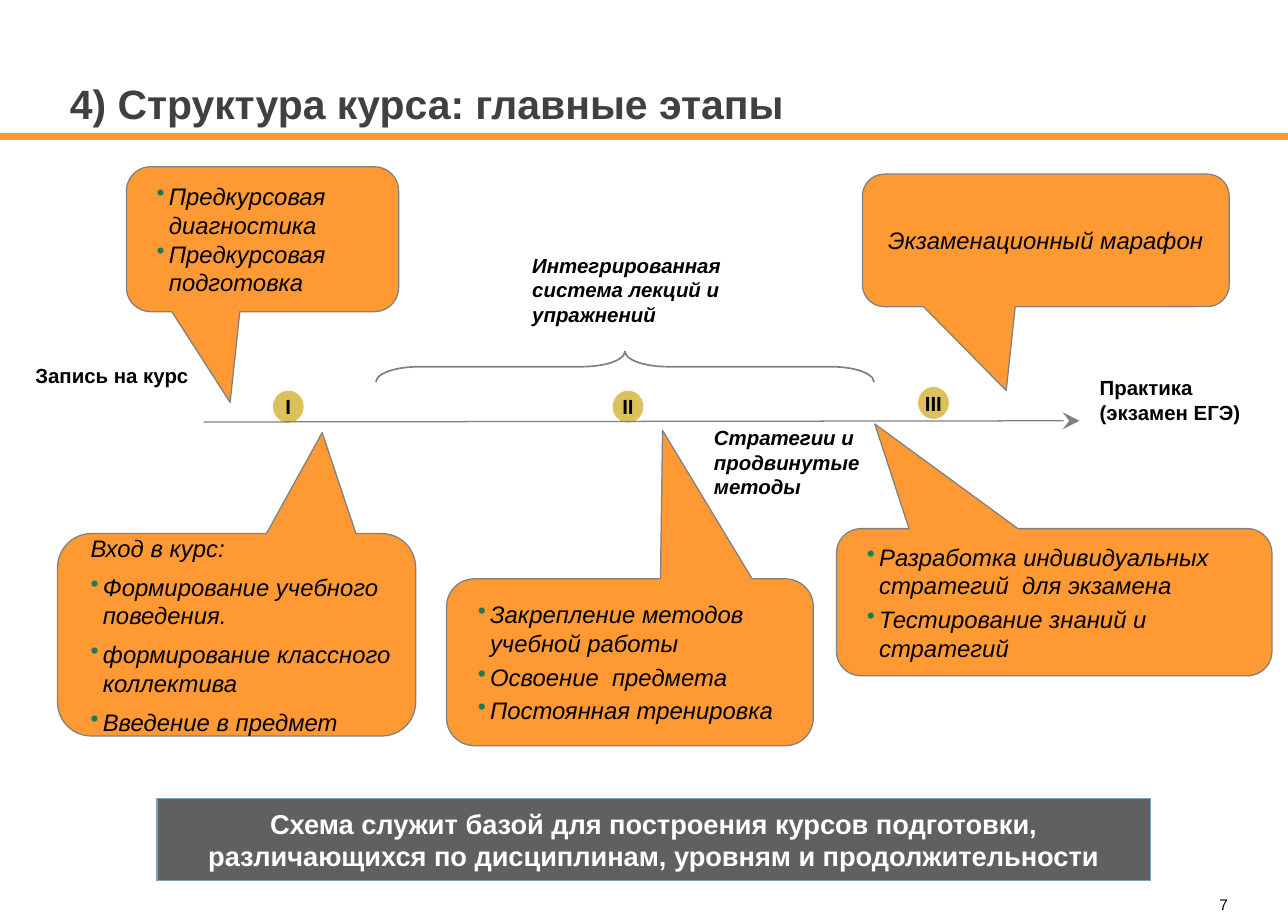
from dataclasses import dataclass, field
from typing import Any, Optional

from lxml import etree
from pptx import Presentation
from pptx import util as u
from pptx.dml.color import RGBColor
from pptx.enum import shapes, text
from pptx.oxml import ns


@dataclass(frozen=True)
class Theme:
    font: str = "Arial"
    black: str = "000000"
    white: str = "FFFFFF"
    title: str = "404040"
    orange: str = "FF9933"
    grey: str = "808080"
    bullet: str = "177B57"
    gold: str = "DCC05A"
    banner: str = "606060"
    banner_edge: str = "79A2B3"
    title_size: float = 24
    banner_size: float = 16
    callout_size: float = 14
    label_size: float = 12
    number_size: float = 9


THEME = Theme()
MIDDLE = text.MSO_ANCHOR.MIDDLE
CENTER = text.PP_ALIGN.CENTER
NO_MARGINS = dict.fromkeys(("margin_left", "margin_right", "margin_top", "margin_bottom"), 0)


@dataclass(frozen=True)
class TextStyle:
    size: float
    color: str = THEME.black
    bold: bool = False
    italic: bool = False
    frame: dict[str, Any] = field(default_factory=dict)
    paragraph: dict[str, Any] = field(default_factory=dict)


@dataclass(frozen=True)
class Box:
    left: float
    top: float
    width: float
    height: float


@dataclass(frozen=True)
class Label:
    box: Box
    lines: list[str]
    style: TextStyle


@dataclass(frozen=True)
class Callout:
    box: Box
    tip: tuple[float, float]
    lines: list[str]
    heading: Optional[str] = None
    space_after: float = 0
    bulleted: bool = True


@dataclass(frozen=True)
class Stage:
    numeral: str
    left: float
    top: float


LABEL = TextStyle(THEME.label_size, bold=True)
LABEL_ITALIC = TextStyle(THEME.label_size, bold=True, italic=True)
CALLOUT = TextStyle(THEME.callout_size, italic=True, frame={"vertical_anchor": MIDDLE})
STAGE = TextStyle(THEME.label_size, bold=True, paragraph={"alignment": CENTER},
                  frame={**NO_MARGINS, "vertical_anchor": MIDDLE, "word_wrap": False})
BANNER = TextStyle(THEME.banner_size, THEME.white, bold=True,
                   frame={"vertical_anchor": MIDDLE}, paragraph={"alignment": CENTER})
NUMBER = TextStyle(THEME.number_size, frame=NO_MARGINS,
                   paragraph={"alignment": text.PP_ALIGN.RIGHT})
TITLE = TextStyle(THEME.title_size, THEME.title, bold=True,
                  frame={"margin_left": 0, "margin_right": 0,
                         "vertical_anchor": text.MSO_ANCHOR.BOTTOM,
                         "auto_size": text.MSO_AUTO_SIZE.NONE},
                  paragraph={"alignment": text.PP_ALIGN.LEFT})

LABELS = [
    Label(Box(412, 246.2, 140, 52.6), ["Стратегии и", "продвинутые", "методы"], LABEL_ITALIC),
    Label(Box(305.3, 144.7, 140, 56.2), ["Интегрированная", "система лекций и упражнений"], LABEL_ITALIC),
    Label(Box(13.7, 209.5, 110.2, 21.6), ["Запись на курс"], LABEL),
    Label(Box(638.4, 216.7, 106, 36), ["Практика (экзамен ЕГЭ)"], LABEL),
    Label(Box(706.3, 525.6, 14.4, 10.8), ["7"], NUMBER),
]

CALLOUTS = [
    Callout(Box(506.2, 102.2, 215.3, 77.8), (-0.108, 1.133),
            ["Экзаменационный марафон"], bulleted=False),
    Callout(Box(74.2, 97.9, 159.8, 85), (-0.119, 1.127),
            ["Предкурсовая диагностика", "Предкурсовая подготовка"]),
    Callout(Box(262.1, 339.8, 215.3, 97.9), (0.089, -1.39),
            ["Закрепление методов учебной работы", "Освоение  предмета",
             "Постоянная тренировка"], space_after=3),
    Callout(Box(33.8, 313.2, 210.2, 118.8), (0.239, -0.999),
            ["Формирование учебного поведения.", "формирование классного коллектива",
             "Введение в предмет"], heading="Вход в курс:", space_after=6),
    Callout(Box(491, 310.3, 255.6, 86.4), (-0.412, -1.211),
            ["Разработка индивидуальных стратегий  для экзамена",
             "Тестирование знаний и стратегий"], space_after=3),
]

STAGES = [Stage("I", 160.6, 229.7), Stage("II", 360, 229.7), Stage("III", 539.3, 227.5)]


def apply(target: Any, values: dict[str, Any]) -> None:
    for name, value in values.items():
        setattr(target, name, value)


def points(*lengths: float) -> list[int]:
    return [u.Pt(length) for length in lengths]


def frame_of(box: Box) -> list[int]:
    return points(box.left, box.top, box.width, box.height)


def write(shape: Any, lines: list[str], style: TextStyle) -> list[Any]:
    frame = shape.text_frame
    apply(frame, {"word_wrap": True, **style.frame})
    frame.text = "\n".join(lines)
    for paragraph in frame.paragraphs:
        apply(paragraph, style.paragraph)
        apply(paragraph.font, {"name": THEME.font, "size": u.Pt(style.size),
                               "bold": style.bold, "italic": style.italic})
        paragraph.font.color.rgb = RGBColor.from_string(style.color)
    return list(frame.paragraphs)


def hang(paragraph: Any, bulleted: bool) -> None:
    properties = paragraph._p.get_or_add_pPr()
    apply(properties, {"marL": u.Pt(13.7), "indent": u.Pt(-7.2)})
    properties.set("marL", str(u.Pt(13.7)))
    properties.set("indent", str(u.Pt(-7.2)))
    if bulleted:
        color = etree.Element(ns.qn("a:buClr"))
        etree.SubElement(color, ns.qn("a:srgbClr"), val=THEME.bullet)
        mark = etree.Element(ns.qn("a:buChar"), char="•")
        default_run = properties.find(ns.qn("a:defRPr"))
        default_run.addprevious(color)
        default_run.addprevious(mark)


def add_shape(slide: Any, kind: Any, box: Box, line: str, width: float = 0.75,
              fill: Optional[str] = None, adjustments: tuple[float, ...] = ()) -> Any:
    shape = slide.shapes.add_shape(kind, *frame_of(box))
    shape.shadow.inherit = False
    for index, value in enumerate(adjustments):
        shape.adjustments[index] = value
    if fill:
        shape.fill.solid()
        shape.fill.fore_color.rgb = RGBColor.from_string(fill)
    else:
        shape.fill.background()
    shape.line.color.rgb = RGBColor.from_string(line)
    shape.line.width = u.Pt(width)
    return shape


def add_line(slide: Any, start: tuple[float, float], end: tuple[float, float],
             color: str, width: float, arrow: bool = False) -> None:
    line = slide.shapes.add_connector(shapes.MSO_CONNECTOR.STRAIGHT, *points(*start, *end))
    line.line.color.rgb = RGBColor.from_string(color)
    line.line.width = u.Pt(width)
    if arrow:
        etree.SubElement(line.line._get_or_add_ln(), ns.qn("a:tailEnd"),
                         type="stealth", w="lg", len="lg")
    etree.SubElement(line._element.spPr, ns.qn("a:effectLst"))


def add_callout(slide: Any, callout: Callout) -> None:
    shape = add_shape(slide, shapes.MSO_SHAPE.ROUNDED_RECTANGULAR_CALLOUT, callout.box,
                      THEME.grey, fill=THEME.orange, adjustments=(*callout.tip, 0.167))
    heading = [callout.heading] if callout.heading else []
    paragraphs = write(shape, heading + callout.lines, CALLOUT)
    for index, paragraph in enumerate(paragraphs):
        if callout.bulleted:
            apply(paragraph, {"alignment": text.PP_ALIGN.LEFT,
                              "space_after": u.Pt(callout.space_after)})
            hang(paragraph, index >= len(heading))
        else:
            paragraph.alignment = CENTER


def main() -> None:
    presentation = Presentation()
    apply(presentation, {"slide_width": u.Pt(756), "slide_height": u.Pt(540)})
    slide = presentation.slides.add_slide(presentation.slide_layouts[5])
    title = slide.shapes.title
    apply(title, dict(zip(("left", "top", "width", "height"), points(41, 13, 679, 65.5))))
    write(title, ["4) Структура курса: главные этапы"], TITLE)
    add_line(slide, (756, 80.2), (0, 80.2), THEME.orange, 4.25)
    for label in LABELS:
        write(slide.shapes.add_textbox(*frame_of(label.box)), label.lines, label.style)
    brace = add_shape(slide, shapes.MSO_SHAPE.LEFT_BRACE, Box(357.8, 69.1, 18, 292.3),
                      THEME.grey, 1, adjustments=(1.395, 0.5))
    brace.rotation = 90
    for callout in CALLOUTS:
        add_callout(slide, callout)
    banner = add_shape(slide, shapes.MSO_SHAPE.RECTANGLE, Box(92.2, 468.7, 583.2, 48.2),
                       THEME.banner_edge, fill=THEME.banner)
    write(banner, ["Схема служит базой для построения курсов подготовки, "
                   "различающихся по дисциплинам, уровням и продолжительности"], BANNER)
    for stage in STAGES:
        circle = add_shape(slide, shapes.MSO_SHAPE.OVAL, Box(stage.left, stage.top, 17.3, 18),
                           THEME.gold, fill=THEME.gold)
        write(circle, [stage.numeral], STAGE)
    add_line(slide, (119.5, 247.7), (633.6, 247), THEME.grey, 0.75, arrow=True)
    presentation.save("out.pptx")


if __name__ == "__main__":
    main()
